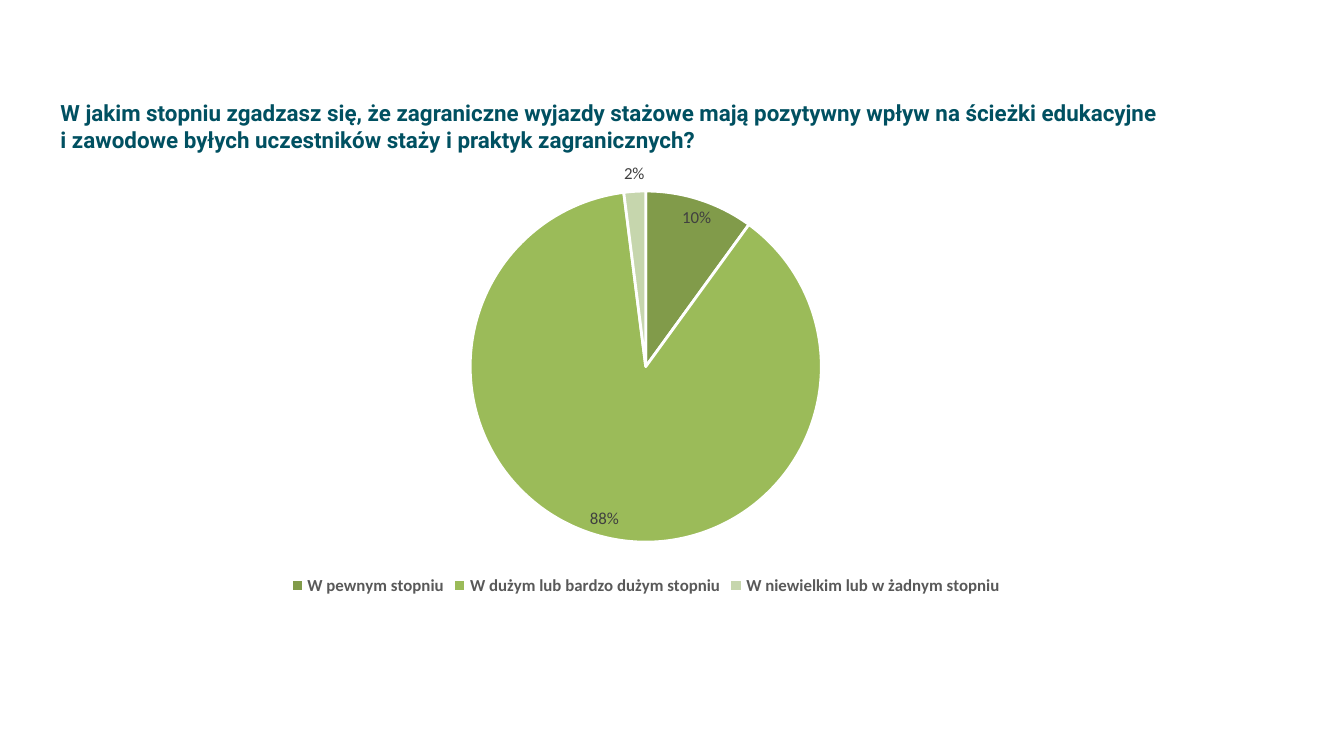
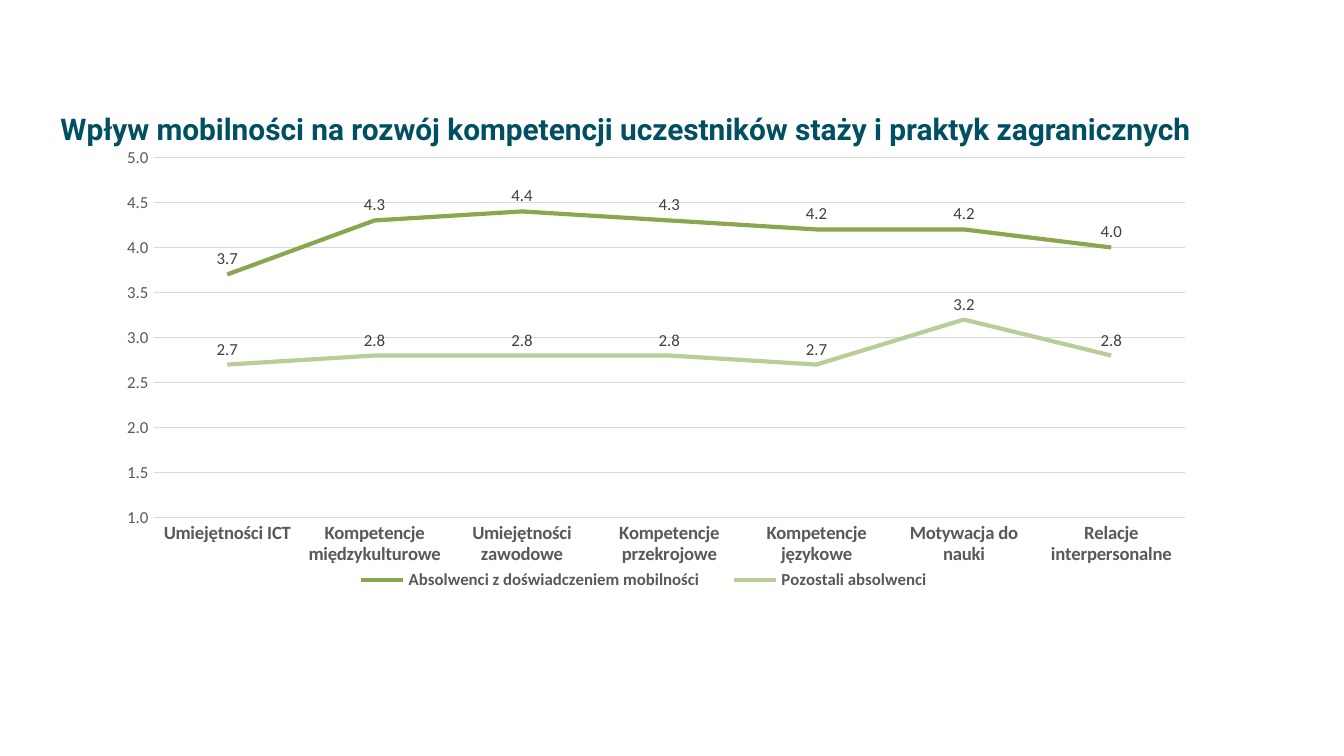
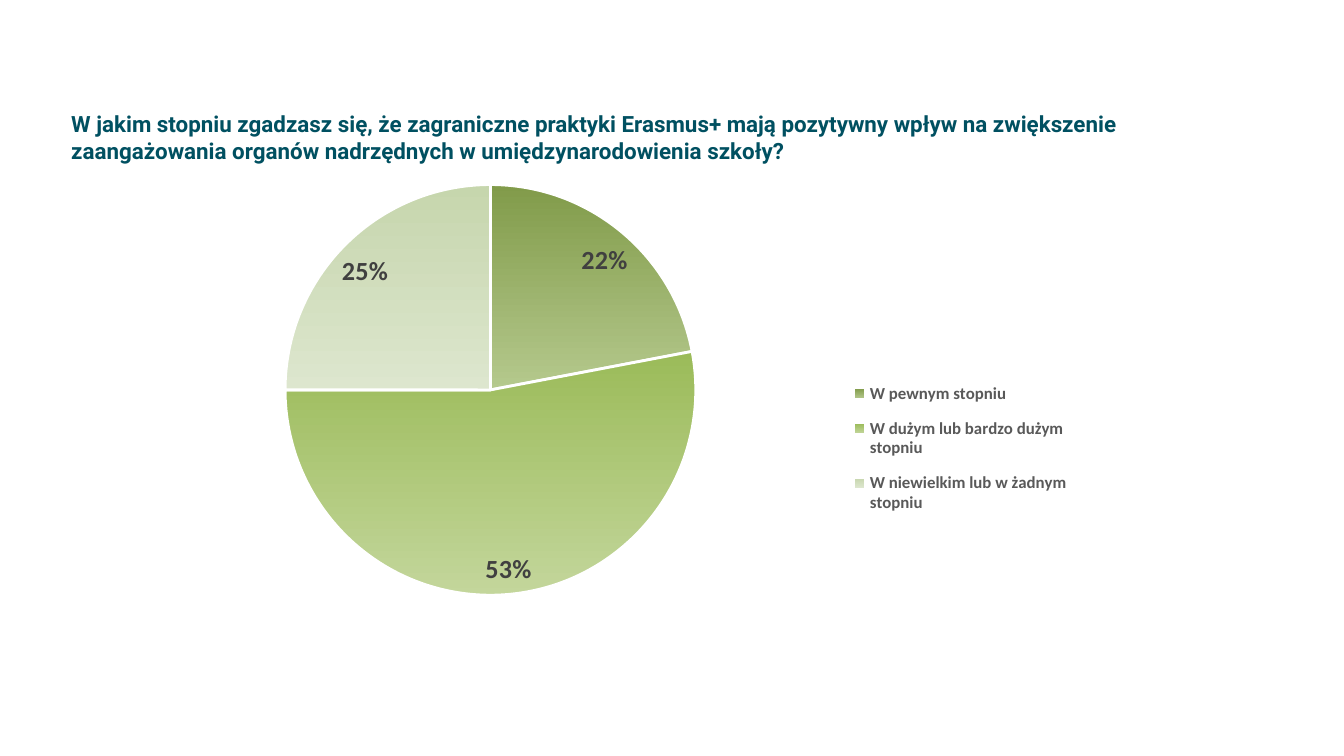
from lxml import etree
from pptx import Presentation
from pptx.chart.data import CategoryChartData
from pptx.dml.color import RGBColor
from pptx.enum.chart import (
    XL_CHART_TYPE, XL_LABEL_POSITION, XL_LEGEND_POSITION, XL_TICK_MARK,
)
from pptx.enum.text import MSO_ANCHOR, MSO_AUTO_SIZE, PP_ALIGN
from pptx.oxml.ns import qn
from pptx.util import Inches, Pt

WIDTH = Inches(10)
HEIGHT = WIDTH * 9 // 16
CELL = WIDTH / 100
TITLE_ONLY = 5
TITLE_FONT, CHART_FONT = "Roboto", "Calibri"
COLORS = {
    "title": "005061",
    "text": "000000",
    "axis": "595959",
    "label": "404040",
    "grid": "D9D9D9",
    "border": "FFFFFF",
    "graduates": "8AA64F",
    "others": "B8CD97",
}
SLICES = [("819B4A", "B5C98D"), ("9BBB59", "C3D69B"), ("C6D6AD", "DDE6CE")]
ANSWERS = [
    "W pewnym stopniu",
    "W dużym lub bardzo dużym stopniu",
    "W niewielkim lub w żadnym stopniu",
]
SKILLS = [
    "Umiejętności ICT",
    "Kompetencje międzykulturowe",
    "Umiejętności zawodowe",
    "Kompetencje przekrojowe",
    "Kompetencje językowe",
    "Motywacja do nauki",
    "Relacje interpersonalne",
]
RATINGS = [
    ("Absolwenci z doświadczeniem mobilności", "graduates",
     [3.7, 4.3, 4.4, 4.3, 4.2, 4.2, 4.0]),
    ("Pozostali absolwenci ", "others",
     [2.7, 2.8, 2.8, 2.8, 2.7, 3.2, 2.8]),
]


def rgb(name):
    return RGBColor.from_string(COLORS.get(name, name))


def grid(*cells):
    return [round(count * CELL) for count in cells]


def style(font, size, color, bold=False, name=CHART_FONT):
    font.name, font.size, font.bold = name, Pt(size), bold
    font.color.rgb = rgb(color)


def style_line(line, color, width):
    line.color.rgb = rgb(color)
    line.width = Pt(width)


def add_page(deck, title, area, size):
    page = deck.slides.add_slide(deck.slide_layouts[TITLE_ONLY])
    box = page.shapes.title
    box.left, box.top, box.width, box.height = grid(*area)
    frame = box.text_frame
    frame.word_wrap = True
    frame.auto_size = MSO_AUTO_SIZE.NONE
    frame.vertical_anchor = MSO_ANCHOR.TOP
    frame.text = title
    para = frame.paragraphs[0]
    para.alignment = PP_ALIGN.LEFT
    style(para.font, size, "title", True, TITLE_FONT)
    return page


def add_chart(page, kind, area, categories, series, number_format, legend):
    data = CategoryChartData(number_format=number_format)
    data.categories = categories
    for name, values in series:
        data.add_series(name, values)
    chart = page.shapes.add_chart(kind, *grid(*area), data).chart
    style(chart.font, 10, "text")
    chart.has_title = False
    chart.has_legend = True
    chart.legend.position = legend
    chart.legend.include_in_layout = False
    style(chart.legend.font, 9, "axis", True)
    return chart


def set_layout(parent, index, percents, inner=False):
    for old in parent.findall(qn("c:layout")):
        parent.remove(old)
    layout = etree.Element(qn("c:layout"))
    manual = etree.SubElement(layout, qn("c:manualLayout"))
    settings = [("layoutTarget", "inner")] if inner else []
    settings += [("xMode", "edge"), ("yMode", "edge")]
    settings += [(tag, percent / 100) for tag, percent in zip("xywh", percents)]
    for tag, value in settings:
        etree.SubElement(manual, qn(f"c:{tag}")).set("val", str(value))
    parent.insert(index, layout)


def arrange(chart, plot, legend):
    set_layout(chart.element.find(".//" + qn("c:plotArea")), 0, plot, inner=True)
    set_layout(chart.element.find(".//" + qn("c:legend")), 1, legend)


def add_labels(labels, number_format, position, size, bold=False):
    labels.show_value = True
    labels.number_format = number_format
    labels.number_format_is_linked = False
    labels.position = position
    style(labels.font, size, "label", bold)


def add_pie(page, area, values, legend, label_size, shaded=False):
    chart = add_chart(page, XL_CHART_TYPE.PIE, area, ANSWERS,
                      [("Series 1", values)], "0%", legend)
    plot = chart.plots[0]
    plot.vary_by_categories = True
    for index, (dark, light) in enumerate(SLICES):
        form = plot.series[0].points[index].format
        if shaded:
            form.fill.gradient()
            form.fill.gradient_angle = 270
            for stop, color in zip(form.fill.gradient_stops, (dark, light)):
                stop.color.rgb = rgb(color)
        else:
            form.fill.solid()
            form.fill.fore_color.rgb = rgb(dark)
        style_line(form.line, "border", 1.5)
    add_labels(plot.series[0].data_labels, "0%", XL_LABEL_POSITION.BEST_FIT,
               label_size, shaded)
    return chart


def add_ratings(page, area):
    number_format = "###0.0"
    chart = add_chart(page, XL_CHART_TYPE.LINE, area, SKILLS,
                      [(name, values) for name, _, values in RATINGS],
                      number_format, XL_LEGEND_POSITION.BOTTOM)
    arrange(chart, (4.8, 3.2, 93.7, 76.6), (21, 89, 57, 8))
    chart.plots[0].vary_by_categories = False
    for series, (_, color, _) in zip(chart.plots[0].series, RATINGS):
        series.smooth = False
        style_line(series.format.line, color, 2.25)
        add_labels(series.data_labels, number_format, XL_LABEL_POSITION.ABOVE, 9)

    skills, scale = chart.category_axis, chart.value_axis
    for axis in (skills, scale):
        axis.major_tick_mark = axis.minor_tick_mark = XL_TICK_MARK.NONE
    style(skills.tick_labels.font, 10, "axis", True)
    style_line(skills.format.line, "grid", 0.75)
    style(scale.tick_labels.font, 9, "axis")
    scale.tick_labels.number_format = number_format
    scale.tick_labels.number_format_is_linked = False
    scale.minimum_scale, scale.maximum_scale, scale.major_unit = 1, 5, 0.5
    scale.format.line.fill.background()
    scale.has_major_gridlines = True
    style_line(scale.major_gridlines.format.line, "grid", 0.75)


def main():
    deck = Presentation()
    deck.slide_width, deck.slide_height = WIDTH, HEIGHT

    careers = add_page(
        deck,
        "W jakim stopniu zgadzasz się, że zagraniczne wyjazdy stażowe mają "
        "pozytywny wpływ na ścieżki edukacyjne \v"
        "i zawodowe byłych uczestników staży i praktyk zagranicznych?",
        (3.5, 6.9, 93.7, 27.3), 12)
    add_pie(careers, (7.5, 10.8, 81.1, 33.9), [0.1, 0.88, 0.02],
            XL_LEGEND_POSITION.BOTTOM, 9)

    skills = add_page(
        deck,
        "Wpływ mobilności na rozwój kompetencji uczestników staży "
        "i praktyk zagranicznych",
        (3.5, 7.7, 94.5, 27.3), 16)
    add_ratings(skills, (7.5, 10.6, 81.9, 35))

    authorities = add_page(
        deck,
        "W jakim stopniu zgadzasz się, że zagraniczne praktyki Erasmus+ mają "
        "pozytywny wpływ na zwiększenie zaangażowania organów nadrzędnych "
        "w umiędzynarodowienia szkoły?",
        (4.3, 7.7, 85.8, 27.3), 12)
    chart = add_pie(authorities, (9.1, 12.4, 72.1, 33.4), [0.22, 0.53, 0.25],
                    XL_LEGEND_POSITION.RIGHT, 14, shaded=True)
    arrange(chart, (16.8, 4, 42.4, 91.5), (74.5, 45, 24, 35.5))

    deck.save("out.pptx")


if __name__ == "__main__":
    main()
